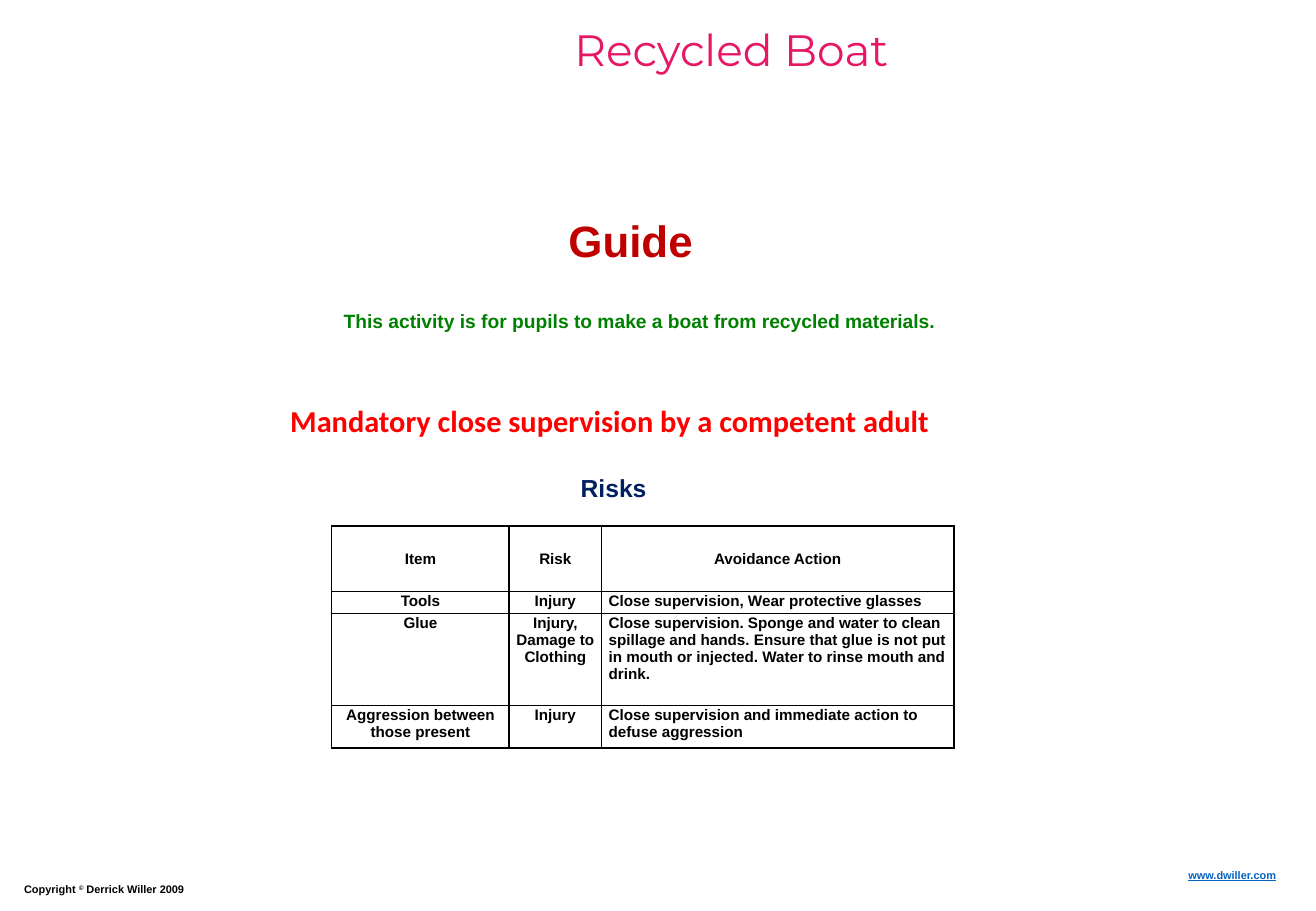
import dataclasses

import lxml.etree
import pptx
import pptx.dml.color
import pptx.enum.text
import pptx.oxml.ns
import pptx.util

Inches = pptx.util.Inches
ALIGN = pptx.enum.text.PP_ALIGN
ANCHOR = pptx.enum.text.MSO_ANCHOR


@dataclasses.dataclass(frozen=True)
class Theme:
    body_font: str = "Arial"
    title_font: str = "Montserrat"
    warning_font: str = "Calibri"
    black: str = "000000"
    pink: str = "E81766"
    dark_red: str = "C00000"
    green: str = "008000"
    red: str = "FF0000"
    navy: str = "002060"
    link: str = "0563C1"
    title_size: float = 26
    warning_size: float = 18
    risks_size: float = 14.6
    intro_size: float = 11.4
    table_size: float = 9
    footer_size: float = 6.5
    border_width: float = 1


class GuideSlide:
    def __init__(self, slide, theme):
        self.slide = slide
        self.theme = theme

    def style(self, paragraph, size, color, font=None, bold=True, align=ALIGN.LEFT):
        paragraph.alignment = align
        paragraph.font.name = font or self.theme.body_font
        paragraph.font.size = pptx.util.Pt(size)
        paragraph.font.bold = bold
        paragraph.font.color.rgb = pptx.dml.color.RGBColor.from_string(color)

    def text(self, box, words, size, color, wrap=True, **look):
        """Add one line of text and return its paragraph."""
        frame = self.slide.shapes.add_textbox(*map(Inches, box)).text_frame
        frame.word_wrap = wrap
        paragraph = frame.paragraphs[0]
        for part in words:
            paragraph.add_run().text = part
        self.style(paragraph, size, color, **look)
        return paragraph

    def border(self, cell):
        properties = cell._tc.get_or_add_tcPr()
        width = str(pptx.util.Pt(self.theme.border_width))
        qn = pptx.oxml.ns.qn
        for position, side in enumerate(("a:lnL", "a:lnR", "a:lnT", "a:lnB")):
            line = lxml.etree.Element(qn(side), w=width)
            fill = lxml.etree.SubElement(line, qn("a:solidFill"))
            lxml.etree.SubElement(fill, qn("a:srgbClr"), val=self.theme.black)
            properties.insert(position, line)

    def table(self, left, top, widths, heights, rows):
        """Add a ruled table: centred headings, last column left-aligned."""
        box = map(Inches, (left, top, sum(widths), sum(heights)))
        grid = self.slide.shapes.add_table(len(rows), len(widths), *box).table
        grid.first_row = grid.horz_banding = False
        for column, width in zip(grid.columns, widths):
            column.width = Inches(width)
        for r, (height, row) in enumerate(zip(heights, rows)):
            grid.rows[r].height = Inches(height)
            for c, words in enumerate(row):
                cell = grid.cell(r, c)
                cell.text = words
                cell.margin_left = cell.margin_right = Inches(0.06)
                cell.margin_top, cell.margin_bottom = Inches(0.01), 0
                cell.vertical_anchor = ANCHOR.TOP if r else ANCHOR.MIDDLE
                cell.fill.background()
                self.border(cell)
                action = r > 0 and c == len(widths) - 1
                for paragraph in cell.text_frame.paragraphs:
                    self.style(paragraph, self.theme.table_size, self.theme.black,
                               align=ALIGN.LEFT if action else ALIGN.CENTER)


def main():
    deck = pptx.Presentation()
    deck.slide_width, deck.slide_height = Inches(10.83), Inches(7.5)
    theme = Theme()
    guide = GuideSlide(deck.slides.add_slide(deck.slide_layouts[6]), theme)

    # Footer
    copyright_line = guide.text((0.1, 7.22, 4.59, 0.21),
                                ["Copyright ", "©", " Derrick Willer 2009"],
                                theme.footer_size, theme.black)
    copyright_line.runs[1]._r.get_or_add_rPr().set("baseline", "30000")
    website = guide.text((9.51, 7.1, 1.09, 0.21), ["www.dwiller.com"],
                         theme.footer_size, theme.link, align=ALIGN.RIGHT)
    website.runs[0].font.underline = True

    # Headings and introduction
    guide.text((4.42, 0.14, 3.2, 0.55), ["Recycled Boat"], theme.title_size,
               theme.pink, font=theme.title_font, bold=False, align=ALIGN.CENTER)
    guide.text((4.58, 1.71, 1.24, 0.54), ["Guide"], theme.title_size,
               theme.dark_red, wrap=False)
    guide.text((2.73, 2.5, 7.24, 0.29),
               ["This activity is for pupils to make a boat from recycled materials."],
               theme.intro_size, theme.green)
    guide.text((2.29, 3.26, 6.27, 0.4),
               ["Mandatory close supervision by a competent adult"],
               theme.warning_size, theme.red, wrap=False, font=theme.warning_font)

    # Risks
    guide.text((4.68, 3.84, 0.75, 0.35), ["Risks"], theme.risks_size,
               theme.navy, wrap=False)
    guide.table(2.73, 4.33, (1.46, 0.76, 2.9), (0.54, 0.18, 0.76, 0.35), [
        ("Item", "Risk", "Avoidance Action"),
        ("Tools", "Injury", "Close supervision, Wear protective glasses"),
        ("Glue", "Injury,\nDamage to Clothing",
         "Close supervision. Sponge and water to clean spillage and hands. "
         "Ensure that glue is not put in mouth or injected. "
         "Water to rinse mouth and drink."),
        ("Aggression between those present", "Injury",
         "Close supervision and immediate action to defuse aggression"),
    ])

    deck.save("out.pptx")


if __name__ == "__main__":
    main()
